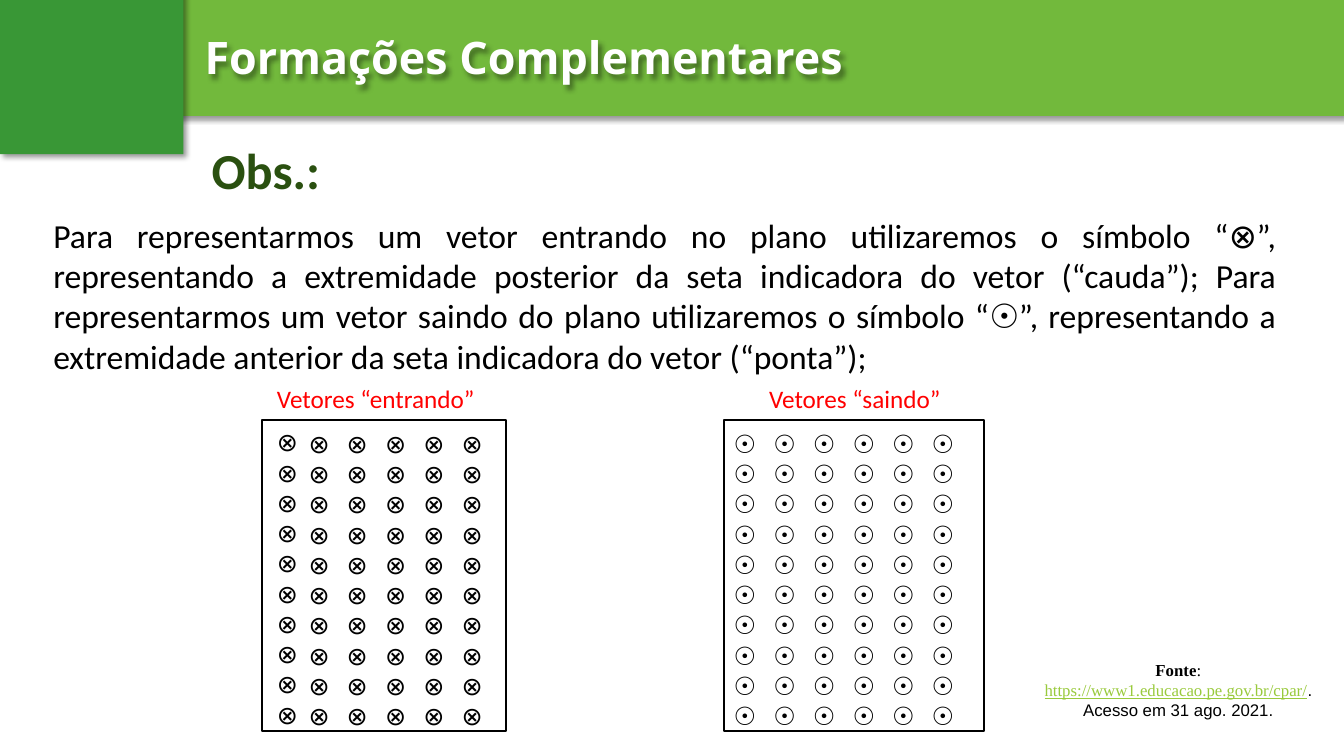
"""Build the slide on symbols for vectors entering and leaving the plane."""
from lxml import etree
from pptx import Presentation
from pptx.dml.color import RGBColor
from pptx.enum.shapes import MSO_SHAPE
from pptx.enum.text import MSO_ANCHOR, MSO_AUTO_SIZE, PP_ALIGN
from pptx.oxml.ns import qn
from pptx.util import Pt

RECTANGLE = MSO_SHAPE.RECTANGLE
TOP = MSO_ANCHOR.TOP
NO_AUTOSIZE = MSO_AUTO_SIZE.NONE
LEFT, CENTER, JUSTIFY = PP_ALIGN.LEFT, PP_ALIGN.CENTER, PP_ALIGN.JUSTIFY
BLACK, WHITE, RED = "000000", "FFFFFF", "FF0000"
ROWS = 10
EXPLANATION = (
    "Para representarmos um vetor entrando no plano utilizaremos o símbolo “⊗”, "
    "representando a extremidade posterior da seta indicadora do vetor (“cauda”); "
    "Para representarmos um vetor saindo do plano utilizaremos o símbolo “☉”, "
    "representando a extremidade anterior da seta indicadora do vetor (“ponta”);"
)


def color(value):
    """Turn a hex string into a colour."""
    return RGBColor.from_string(value)


def set_font(font, size, value, name="Calibri", bold=False):
    """Set the size, colour, typeface and weight of a font."""
    font.size = Pt(size)
    font.color.rgb = color(value)
    font.name = name
    font.bold = bold


def add_shadow(shape):
    """Give a shape a soft shadow towards the lower right."""
    effects = etree.SubElement(shape._element.spPr, qn("a:effectLst"))
    shadow = etree.SubElement(effects, qn("a:outerShdw"), blurRad=str(Pt(4)),
                              dist=str(Pt(3)), dir="2700000", algn="tl", rotWithShape="0")
    shade = etree.SubElement(shadow, qn("a:srgbClr"), val=BLACK)
    etree.SubElement(shade, qn("a:alpha"), val="40000")


def add_bar(slide, left, top, width, height, fill):
    """Add a filled rectangle with a shadow."""
    bar = slide.shapes.add_shape(RECTANGLE, Pt(left), Pt(top), Pt(width), Pt(height))
    bar.fill.solid()
    bar.fill.fore_color.rgb = color(fill)
    bar.line.fill.background()
    add_shadow(bar)


def add_frame(slide, left, top, width, height):
    """Add an unfilled rectangle with a black outline."""
    frame = slide.shapes.add_shape(RECTANGLE, Pt(left), Pt(top), Pt(width), Pt(height))
    frame.shadow.inherit = False
    frame.fill.background()
    frame.line.color.rgb = color(BLACK)
    frame.line.width = Pt(1.5)


def add_box(slide, left, top, width, height):
    """Add an empty wrapping text box."""
    box = slide.shapes.add_textbox(Pt(left), Pt(top), Pt(width), Pt(height))
    box.text_frame.word_wrap = True
    return box


def add_text(slide, place, text, size, value, align=LEFT, name="Calibri", bold=False):
    """Add a text box with one paragraph."""
    box = add_box(slide, *place)
    paragraph = box.text_frame.paragraphs[0]
    paragraph.text = text
    paragraph.alignment = align
    set_font(paragraph.font, size, value, name, bold)
    return box


def add_bullet(paragraph, symbol, indent):
    """Give a paragraph a hanging black bullet."""
    properties = paragraph._p.get_or_add_pPr()
    properties.set("marL", str(Pt(indent)))
    properties.set("indent", str(-Pt(indent)))
    bullet_color = etree.SubElement(properties, qn("a:buClr"))
    etree.SubElement(bullet_color, qn("a:srgbClr"), val=BLACK)
    etree.SubElement(properties, qn("a:buFont"), typeface="Calibri")
    etree.SubElement(properties, qn("a:buChar"), char=symbol)


def add_symbol_field(slide, place, symbol, columns, bulleted=False):
    """Add rows of evenly spaced symbols."""
    text_frame = add_box(slide, *place).text_frame
    for row in range(ROWS):
        paragraph = text_frame.add_paragraph() if row else text_frame.paragraphs[0]
        if bulleted:
            add_bullet(paragraph, symbol, 22.5)
        run = paragraph.add_run()
        run.text = " ".join([symbol] * columns)
        run._r.get_or_add_rPr().set("spc", "407")
        set_font(paragraph.font, 18, BLACK)


def format_title(slide):
    """Place and format the title placeholder."""
    title = slide.shapes.title
    title.left, title.top, title.width, title.height = Pt(144), Pt(95.8), Pt(864), Pt(108)
    text_frame = title.text_frame
    text_frame.text = "Obs.:"
    text_frame.vertical_anchor = TOP
    text_frame.auto_size = NO_AUTOSIZE
    paragraph = text_frame.paragraphs[0]
    paragraph.alignment = LEFT
    set_font(paragraph.font, 36, "2A5010", bold=True)


def add_source(slide):
    """Add the source reference at the lower right."""
    text_frame = add_box(slide, 723.6, 463.7, 236.2, 58.3).text_frame
    text_frame.margin_top = text_frame.margin_bottom = Pt(7.2)
    paragraph = text_frame.paragraphs[0]
    paragraph.alignment = CENTER
    for text, value, name, bold, underline in (
        ("Fonte", BLACK, "Times New Roman", True, False),
        (":", BLACK, "Times New Roman", False, False),
        (" https://www1.educacao.pe.gov.br/cpar/", "99CA3C", "Times New Roman", False, True),
        (". Acesso em 31 ago. 2021.", BLACK, "Arial", False, False),
    ):
        run = paragraph.add_run()
        run.text = text
        set_font(run.font, 12, value, name, bold)
        run.font.underline = underline


def main():
    """Build and save the presentation."""
    presentation = Presentation()
    presentation.slide_width, presentation.slide_height = Pt(960), Pt(540)
    slide = presentation.slides.add_slide(presentation.slide_layouts[5])
    add_bar(slide, 101.5, 0, 858.5, 82.8, "72B93C")
    heading = add_text(slide, (139, 18, 779, 46), "Formações Complementares", 32, WHITE,
                       name="Open Sans", bold=True)
    add_shadow(heading)
    add_bar(slide, 0, -5.8, 131, 116, "399736")
    format_title(slide)
    add_symbol_field(slide, (190.8, 302.4, 161.3, 225.4), "⊗", 5, bulleted=True)
    add_frame(slide, 187.2, 300.2, 174.2, 221.8)
    add_symbol_field(slide, (517, 302.4, 264.2, 225.4), "☉", 6)
    add_frame(slide, 517, 300.2, 185.8, 221.8)
    add_text(slide, (31, 149.8, 887.8, 152.6), EXPLANATION, 24, BLACK, JUSTIFY)
    add_text(slide, (190.8, 270, 172.8, 28.8), "Vetores “entrando”", 18, RED)
    add_text(slide, (524.2, 270, 172.8, 28.8), "Vetores “saindo”", 18, RED, CENTER)
    add_source(slide)
    presentation.save("out.pptx")


if __name__ == "__main__":
    main()
